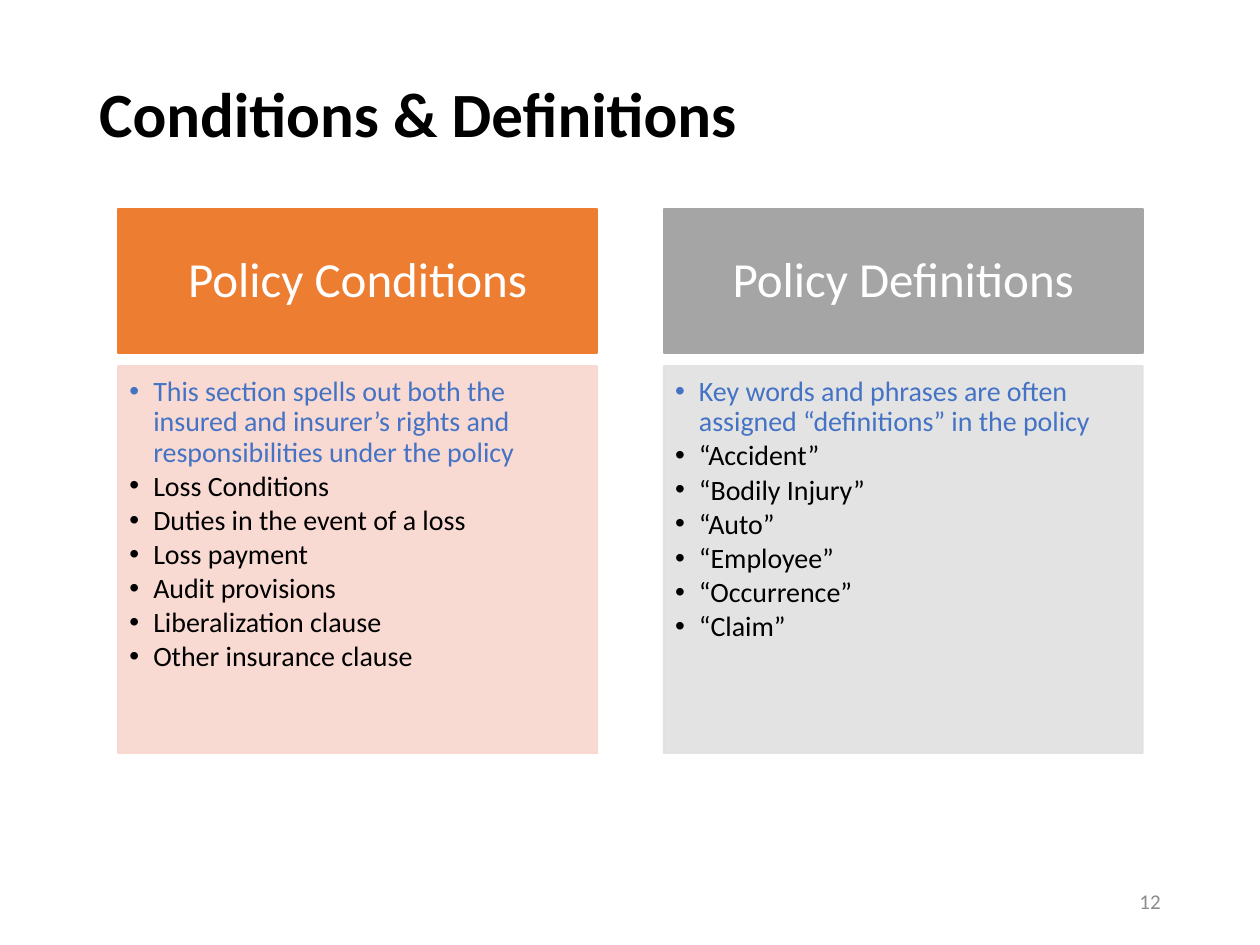
from lxml import etree
from pptx import Presentation, util as u
from pptx.dml.color import RGBColor
from pptx.enum import text
from pptx.oxml.ns import qn

TITLE = "Conditions & Definitions"
PAGE = "12"
COLUMNS = [
    {"head": "Policy Conditions", "fill": "ED7D31", "tint": "F8D7CE",
     "lead": "This section spells out both the insured and insurer’s rights "
             "and responsibilities under the policy",
     "items": ["Loss Conditions", "Duties in the event of a loss", "Loss payment",
               "Audit provisions", "Liberalization clause", "Other insurance clause"]},
    {"head": "Policy Definitions", "fill": "A5A5A5", "tint": "E1E1E1",
     "lead": "Key words and phrases are often assigned “definitions” in the policy",
     "items": ["“Accident”", "“Bodily Injury”", "“Auto”", "“Employee”",
               "“Occurrence”", "“Claim”"]},
]
THEME = {"font": "Calibri", "ink": "000000", "accent": "4472C4", "white": "FFFFFF",
         "muted": "8C8C8C", "title": 36, "head": 28, "body": 16, "page": 12, "alpha": 90}
LEFT, PITCH, WIDTH = 2.38, 11.0, 9.66
HEAD_TOP, HEAD_H, BODY_TOP, BODY_H = 4.22, 2.9, 7.38, 7.8
INDENT = 0.48
A, P = text.PP_ALIGN, text.MSO_ANCHOR


def place(sp, x, y, w, h):
    sp.left, sp.top, sp.width, sp.height = (u.Cm(v) for v in (x, y, w, h))


def setup(sp, anchor, insets=(0.25, 0.13, 0.25, 0.13)):
    tf = sp.text_frame
    fmt = {"word_wrap": True, "auto_size": text.MSO_AUTO_SIZE.NONE,
           "vertical_anchor": anchor}
    sides = ("margin_left", "margin_top", "margin_right", "margin_bottom")
    fmt.update(zip(sides, map(u.Cm, insets)))
    for k, v in fmt.items():
        setattr(tf, k, v)
    return tf


def write(p, words, size, color, align=A.LEFT, bold=False, spacing=0.9, after=0):
    fmt = {"alignment": align, "line_spacing": spacing,
           "space_before": u.Pt(0), "space_after": u.Pt(after)}
    for k, v in fmt.items():
        setattr(p, k, v)
    r = p.add_run()
    r.text = words
    for k, v in {"name": THEME["font"], "size": u.Pt(THEME[size]), "bold": bold}.items():
        setattr(r.font, k, v)
    r.font.color.rgb = RGBColor.from_string(THEME[color])


def paint(sp, color, alpha=100):
    sp.line.width = u.Pt(1)
    for fill in (sp.fill, sp.line.fill):
        fill.solid()
        fill.fore_color.rgb = RGBColor.from_string(color)
    if alpha < 100:
        for clr in sp._element.spPr.iter(qn("a:srgbClr")):
            etree.SubElement(clr, qn("a:alpha")).set("val", str(alpha * 1000))


def bullet(p):
    pPr = p._p.get_or_add_pPr()
    pPr.set("marL", str(u.Cm(INDENT)))
    pPr.set("indent", str(-u.Cm(INDENT)))
    etree.SubElement(pPr, qn("a:buFont")).set("typeface", "Arial")
    etree.SubElement(pPr, qn("a:buChar")).set("char", "•")


def main():
    prs = Presentation()
    prs.slide_width, prs.slide_height = u.Cm(25.4), u.Cm(19.05)
    s = prs.slides.add_slide(prs.slide_layouts[4])
    ph = s.placeholders

    place(ph[0], 1.75, 1.02, 21.9, 2.67)
    write(setup(ph[0], P.MIDDLE).paragraphs[0], TITLE, "title", "ink", bold=True)

    for i, col in enumerate(COLUMNS):
        x = LEFT + i * PITCH
        head, body = ph[1 + 2 * i], ph[2 + 2 * i]

        place(head, x, HEAD_TOP, WIDTH, HEAD_H)
        paint(head, col["fill"])
        tf = setup(head, P.MIDDLE, (0.56, 0.3, 0.56, 0.3))
        write(tf.paragraphs[0], col["head"], "head", "white", A.CENTER)

        place(body, x, BODY_TOP, WIDTH, BODY_H)
        paint(body, col["tint"], THEME["alpha"])
        tf = setup(body, P.TOP, (0.23, 0.23, 0.3, 0.36))
        for n, words in enumerate([col["lead"]] + col["items"]):
            p = tf.add_paragraph() if n else tf.paragraphs[0]
            bullet(p)
            write(p, words, "body", "ink" if n else "accent", after=2.2)

    page = s.shapes.add_textbox(0, 0, 0, 0)
    place(page, 17.93, 17.65, 5.72, 1.02)
    write(setup(page, P.MIDDLE).paragraphs[0], PAGE, "page", "muted", A.RIGHT, spacing=1.0)

    prs.save("out.pptx")


if __name__ == "__main__":
    main()
